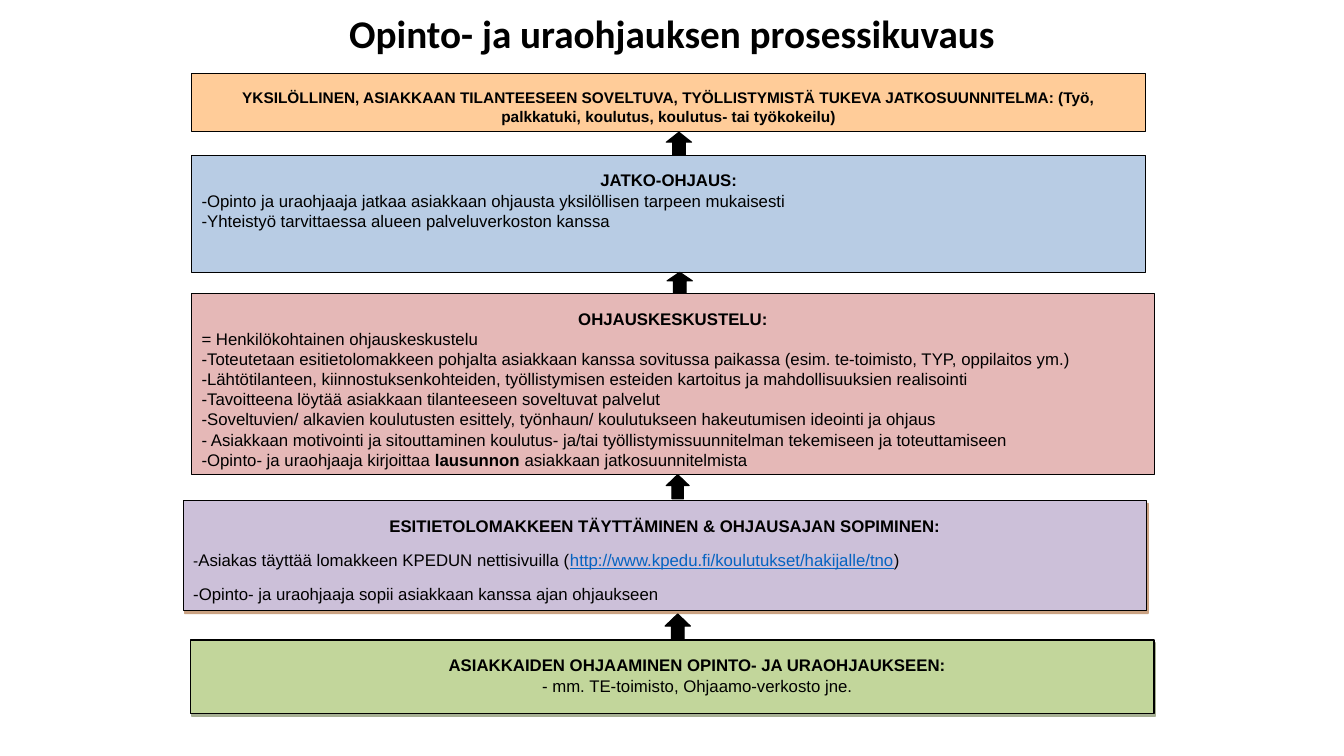
"""Build the slide that describes the study and career guidance process."""
from dataclasses import dataclass

from lxml.etree import SubElement
from pptx import Presentation
from pptx.dml.color import RGBColor
from pptx.enum.shapes import MSO_SHAPE
from pptx.enum.text import MSO_ANCHOR, PP_ALIGN
from pptx.oxml.ns import qn
from pptx.util import Cm, Pt

COLORS = {
    "black": "000000",
    "link": "0563C1",
    "orange": "FFCC99",
    "blue": "B8CCE4",
    "red": "E5B8B7",
    "purple": "CCC0D9",
    "green": "C2D69B",
    "brown shadow": "974706",
    "green shadow": "4E6128",
}
TEXT_INSET = 0.25
TOP_INSET = 0.38


@dataclass(frozen=True)
class Run:
    text: str
    bold: bool = False
    size: float | None = None
    link: bool = False


@dataclass(frozen=True)
class Line:
    runs: tuple[Run, ...]
    centred: bool = False


@dataclass(frozen=True)
class Stage:
    left: float
    top: float
    width: float
    height: float
    color: str
    lines: tuple[Line, ...]
    size: float = 12
    space_after: float = 0
    left_inset: float = TEXT_INSET
    outline: float = 0.75
    shadow: str | None = None


@dataclass(frozen=True)
class Arrow:
    left: float
    top: float
    width: float
    height: float
    head: float


def heading(text: str) -> Line:
    return Line((Run(text, bold=True),), centred=True)


def item(text: str, centred: bool = False) -> Line:
    return Line((Run(text),), centred)


STAGES = (
    Stage(4.8, 16.13, 24.28, 1.85, "green", (
        heading("ASIAKKAIDEN OHJAAMINEN OPINTO- JA URAOHJAUKSEEN:"),
        item("- mm. TE-toimisto, Ohjaamo-verkosto jne.", centred=True),
    ), left_inset=TEXT_INSET + 1.27, outline=1, shadow="green shadow"),
    Stage(4.62, 12.62, 24.28, 2.77, "purple", (
        heading("ESITIETOLOMAKKEEN TÄYTTÄMINEN & OHJAUSAJAN SOPIMINEN:"),
        Line((
            Run("-", size=11),
            Run("Asiakas täyttää lomakkeen KPEDUN nettisivuilla ("),
            Run("http://www.kpedu.fi/koulutukset/hakijalle/tno", link=True),
            Run(")"),
        )),
        item("-Opinto- ja uraohjaaja sopii asiakkaan kanssa ajan ohjaukseen"),
    ), space_after=10, outline=1, shadow="brown shadow"),
    Stage(4.83, 7.39, 24.26, 4.57, "red", (
        heading("OHJAUSKESKUSTELU:"),
        item("= Henkilökohtainen ohjauskeskustelu"),
        item("-Toteutetaan esitietolomakkeen pohjalta asiakkaan kanssa sovitussa paikassa "
             "(esim. te-toimisto, TYP, oppilaitos ym.)"),
        item("-Lähtötilanteen, kiinnostuksenkohteiden, työllistymisen esteiden kartoitus "
             "ja mahdollisuuksien realisointi"),
        item("-Tavoitteena löytää asiakkaan tilanteeseen soveltuvat palvelut"),
        item("-Soveltuvien/ alkavien koulutusten esittely, työnhaun/ koulutukseen "
             "hakeutumisen ideointi ja ohjaus"),
        item("- Asiakkaan motivointi ja sitouttaminen koulutus- ja/tai "
             "työllistymissuunnitelman tekemiseen ja toteuttamiseen"),
        Line((
            Run("-Opinto- ja uraohjaaja kirjoittaa "),
            Run("lausunnon", bold=True),
            Run(" asiakkaan jatkosuunnitelmista"),
        )),
    )),
    Stage(4.83, 3.91, 24.05, 2.95, "blue", (
        heading("JATKO-OHJAUS:"),
        item("-Opinto ja uraohjaaja jatkaa asiakkaan ohjausta yksilöllisen tarpeen mukaisesti"),
        item("-Yhteistyö tarvittaessa alueen palveluverkoston kanssa"),
    )),
    Stage(4.83, 1.85, 24.05, 1.47, "orange", (
        heading("YKSILÖLLINEN, ASIAKKAAN TILANTEESEEN SOVELTUVA, TYÖLLISTYMISTÄ TUKEVA "
                "JATKOSUUNNITELMA: (Työ, palkkatuki, koulutus, koulutus- tai työkokeilu)"),
    ), size=11),
)
ARROWS = (
    Arrow(16.76, 15.47, 0.64, 0.66, 0.48),
    Arrow(16.79, 11.96, 0.58, 0.61, 0.48),
    Arrow(16.81, 6.86, 0.64, 0.53, 0.41),
    Arrow(16.79, 3.33, 0.64, 0.58, 0.44),
)


def rgb(name: str) -> RGBColor:
    return RGBColor.from_string(COLORS[name])


def write_text(shape, lines: tuple[Line, ...], *, size: float, font: str = "Arial",
               space_after: float = 0, line_spacing: float = 1.0,
               anchor: MSO_ANCHOR = MSO_ANCHOR.TOP, left_inset: float = TEXT_INSET,
               top_inset: float = TOP_INSET) -> None:
    frame = shape.text_frame
    frame.word_wrap = True
    frame.vertical_anchor = anchor
    frame.margin_left, frame.margin_right = Cm(left_inset), Cm(TEXT_INSET)
    frame.margin_top, frame.margin_bottom = Cm(top_inset), Cm(0.13)
    for index, line in enumerate(lines):
        paragraph = frame.add_paragraph() if index else frame.paragraphs[0]
        paragraph.alignment = PP_ALIGN.CENTER if line.centred else PP_ALIGN.LEFT
        paragraph.space_after = Pt(space_after)
        paragraph.line_spacing = line_spacing
        for part in line.runs:
            run = paragraph.add_run()
            run.text = part.text
            run.font.name = font
            run.font.size = Pt(part.size or size)
            run.font.bold = part.bold
            run.font.underline = part.link
            run.font.color.rgb = rgb("link" if part.link else "black")


def add_filled_shape(slide, kind: MSO_SHAPE, place: Stage | Arrow, color: str,
                     outline: float = 0.75):
    shape = slide.shapes.add_shape(
        kind, Cm(place.left), Cm(place.top), Cm(place.width), Cm(place.height))
    shape.shadow.inherit = False
    shape.fill.solid()
    shape.fill.fore_color.rgb = rgb(color)
    shape.line.color.rgb = rgb("black")
    shape.line.width = Pt(outline)
    return shape


def add_shadow(shape, color: str) -> None:
    effects = shape._element.spPr.find(qn("a:effectLst"))
    shadow = SubElement(effects, qn("a:outerShdw"), dist=str(Pt(2.2)),
                        dir=str(63 * 60000), algn="ctr", rotWithShape="0")
    shade = SubElement(shadow, qn("a:srgbClr"), val=COLORS[color])
    SubElement(shade, qn("a:alpha"), val="50000")


def add_stage(slide, stage: Stage) -> None:
    shape = add_filled_shape(slide, MSO_SHAPE.RECTANGLE, stage, stage.color, stage.outline)
    if stage.shadow:
        add_shadow(shape, stage.shadow)
    write_text(shape, stage.lines, size=stage.size, space_after=stage.space_after,
               left_inset=stage.left_inset)


def add_arrow(slide, arrow: Arrow) -> None:
    shape = add_filled_shape(slide, MSO_SHAPE.UP_ARROW, arrow, "black")
    shape.adjustments[0] = 0.5
    shape.adjustments[1] = arrow.head


def main() -> None:
    presentation = Presentation()
    presentation.slide_width, presentation.slide_height = Cm(33.87), Cm(19.05)
    slide = presentation.slides.add_slide(presentation.slide_layouts[6])
    title = slide.shapes.add_textbox(Cm(4.23), Cm(0), Cm(25.4), Cm(1.78))
    write_text(title, (heading("Opinto- ja uraohjauksen prosessikuvaus"),), size=28,
               font="Calibri", line_spacing=0.9, anchor=MSO_ANCHOR.MIDDLE, top_inset=0.13)
    for stage in STAGES:
        add_stage(slide, stage)
    for arrow in ARROWS:
        add_arrow(slide, arrow)
    presentation.save("out.pptx")


if __name__ == "__main__":
    main()
